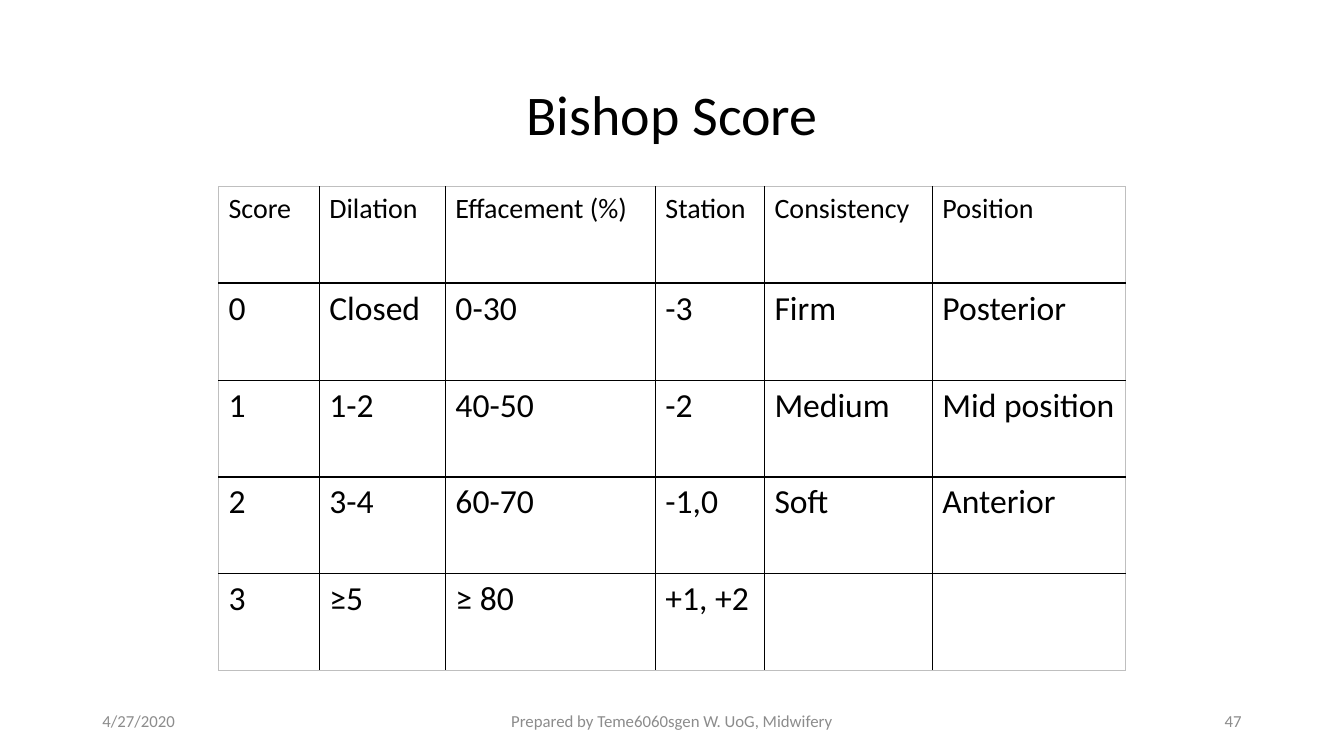
import pptx
import pptx.util
import pptx.dml.color
import pptx.enum.text
import pptx.oxml
import pptx.oxml.ns

Cm = pptx.util.Cm
ALIGN = pptx.enum.text.PP_ALIGN

TITLE = "Bishop Score"
SCORES = [
    ("Score", "Dilation", "Effacement (%)", "Station", "Consistency", "Position"),
    ("0", "Closed", "0-30", "-3", "Firm", "Posterior"),
    ("1", "1-2", "40-50", "-2", "Medium", "Mid position"),
    ("2", "3-4", "60-70", "-1,0", "Soft", "Anterior"),
    ("3", "≥5", "≥ 80", "+1, +2", "", ""),
]
DATE = "4/27/2020"
FOOTER = "Prepared by Teme6060sgen W. UoG, Midwifery"
PAGE = "47"

THEME = {
    "font": "Calibri",
    "ink": "000000",
    "muted": "8C8C8C",
    "frame": "BFBFBF",
    "title": 40,
    "header": 20,
    "body": 24,
    "footer": 12,
    "frame_line": 0.5,
    "grid_line": 1,
    "header_line": 1.5,
}

SLIDE_WIDTH, SLIDE_HEIGHT = 33.87, 19.05
MARGIN = 2.33
TABLE_TOP = 4.7
COLUMN_WIDTHS = [2.54, 3.18, 5.29, 2.75, 4.23, 4.87]
ROW_HEIGHT = 2.44
FOOTER_TOP, FOOTER_HEIGHT = 17.65, 1.01
SIDE_WIDTH, CENTRE_WIDTH = 7.62, 11.43


def write(paragraph, text, size, color, alignment=ALIGN.LEFT):
    paragraph.alignment = alignment
    run = paragraph.add_run()
    run.text = text
    font_values = {"name": THEME["font"], "size": pptx.util.Pt(THEME[size])}
    for name, value in font_values.items():
        setattr(run.font, name, value)
    run.font.color.rgb = pptx.dml.color.RGBColor.from_string(THEME[color])


def add_text(slide, box, text, size, color, alignment):
    shape = slide.shapes.add_textbox(*(Cm(length) for length in box))
    frame_values = {
        "word_wrap": True,
        "vertical_anchor": pptx.enum.text.MSO_ANCHOR.MIDDLE,
    }
    for name, value in frame_values.items():
        setattr(shape.text_frame, name, value)
    write(shape.text_frame.paragraphs[0], text, size, color, alignment)


def set_borders(cell, borders):
    properties = cell._tc.get_or_add_tcPr()
    for index, (side, (color, line)) in enumerate(borders.items()):
        width = pptx.util.Pt(THEME[line])
        border = pptx.oxml.parse_xml(
            f'<a:ln{side} {pptx.oxml.ns.nsdecls("a")} w="{width}"><a:solidFill>'
            f'<a:srgbClr val="{THEME[color]}"/></a:solidFill></a:ln{side}>'
        )
        properties.insert(index, border)


def edge_style(edge, last, header_edge=None):
    if edge in (0, last):
        return "frame", "frame_line"
    return "ink", "header_line" if edge == header_edge else "grid_line"


def add_score_table(slide):
    row_count, column_count = len(SCORES), len(COLUMN_WIDTHS)
    width = sum(COLUMN_WIDTHS)
    table = slide.shapes.add_table(
        row_count, column_count, Cm((SLIDE_WIDTH - width) / 2), Cm(TABLE_TOP),
        Cm(width), Cm(ROW_HEIGHT * row_count),
    ).table
    for name, value in {"first_row": False, "horz_banding": False}.items():
        setattr(table, name, value)
    for column, column_width in zip(table.columns, COLUMN_WIDTHS):
        column.width = Cm(column_width)
    for row_index, values in enumerate(SCORES):
        table.rows[row_index].height = Cm(ROW_HEIGHT)
        for column_index, text in enumerate(values):
            cell = table.cell(row_index, column_index)
            cell.fill.background()
            set_borders(cell, {
                "L": edge_style(column_index, column_count),
                "R": edge_style(column_index + 1, column_count),
                "T": edge_style(row_index, row_count, 1),
                "B": edge_style(row_index + 1, row_count, 1),
            })
            if text:
                size = "body" if row_index else "header"
                write(cell.text_frame.paragraphs[0], text, size, "ink")


def main():
    presentation = pptx.Presentation()
    presentation.slide_width = Cm(SLIDE_WIDTH)
    presentation.slide_height = Cm(SLIDE_HEIGHT)
    slide = presentation.slides.add_slide(presentation.slide_layouts[6])

    title_box = (MARGIN, 1.01, SLIDE_WIDTH - 2 * MARGIN, 3.68)
    add_text(slide, title_box, TITLE, "title", "ink", ALIGN.CENTER)
    add_score_table(slide)

    footers = [
        (DATE, MARGIN, SIDE_WIDTH, ALIGN.LEFT),
        (FOOTER, (SLIDE_WIDTH - CENTRE_WIDTH) / 2, CENTRE_WIDTH, ALIGN.CENTER),
        (PAGE, SLIDE_WIDTH - MARGIN - SIDE_WIDTH, SIDE_WIDTH, ALIGN.RIGHT),
    ]
    for text, left, width, alignment in footers:
        box = (left, FOOTER_TOP, width, FOOTER_HEIGHT)
        add_text(slide, box, text, "footer", "muted", alignment)

    presentation.save("out.pptx")


if __name__ == "__main__":
    main()
